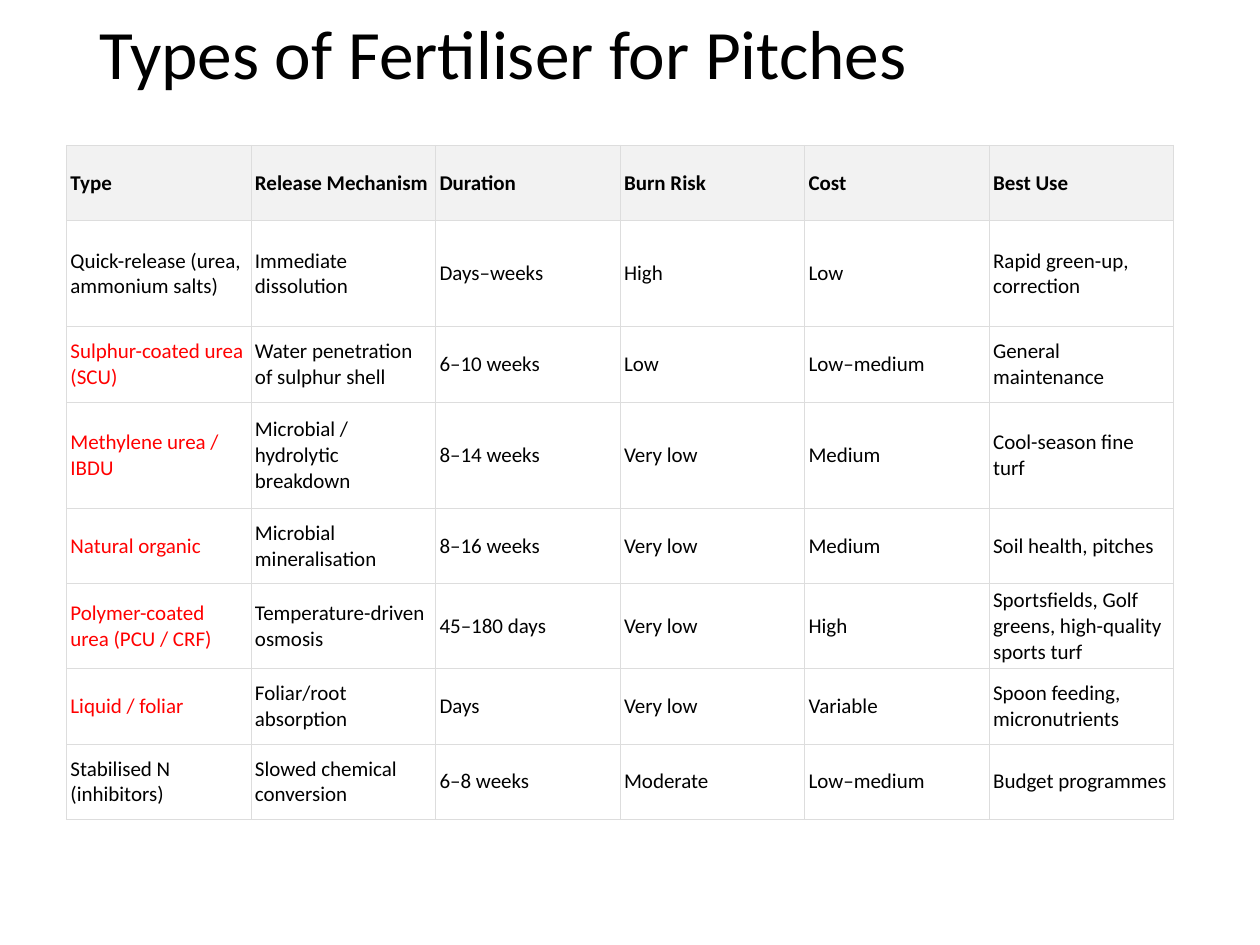
import pptx
import pptx.util
import pptx.dml.color
import pptx.enum.text
import lxml.etree

Cm = pptx.util.Cm
Pt = pptx.util.Pt
RGB = pptx.dml.color.RGBColor
BLACK = RGB(0x00, 0x00, 0x00)
RED = RGB(0xFF, 0x00, 0x00)
GREY = RGB(0xF2, 0xF2, 0xF2)
RULE = RGB(0xDD, 0xDD, 0xDD)
SPACE = "http://schemas.openxmlformats.org/drawingml/2006/main"

ROWS = [
    ["Type", "Release Mechanism", "Duration", "Burn Risk", "Cost", "Best Use"],
    ["Quick-release (urea, ammonium salts)", "Immediate dissolution",
     "Days–weeks", "High", "Low", "Rapid green-up, correction"],
    ["Sulphur-coated urea (SCU)", "Water penetration of sulphur shell",
     "6–10 weeks", "Low", "Low–medium", "General maintenance"],
    ["Methylene urea / IBDU", "Microbial / hydrolytic breakdown",
     "8–14 weeks", "Very low", "Medium", "Cool-season fine turf"],
    ["Natural organic", "Microbial mineralisation",
     "8–16 weeks", "Very low", "Medium", "Soil health, pitches"],
    ["Polymer-coated urea (PCU / CRF)", "Temperature-driven osmosis",
     "45–180 days", "Very low", "High",
     "Sportsfields, Golf greens, high-quality sports turf"],
    ["Liquid / foliar", "Foliar/root absorption",
     "Days", "Very low", "Variable", "Spoon feeding, micronutrients"],
    ["Stabilised N (inhibitors)", "Slowed chemical conversion",
     "6–8 weeks", "Moderate", "Low–medium", "Budget programmes"],
]
TALL = {1, 3}
MARKED = range(2, 7)


class Deck:
    face = "Calibri"
    inset = Cm(0.08)
    line = Pt(0.6)

    def __init__(self, slide):
        self.slide = slide

    def style(self, para, size, color=BLACK, bold=False):
        para.alignment = pptx.enum.text.PP_ALIGN.LEFT
        font = para.font
        font.name = self.face
        font.size = Pt(size)
        font.bold = bold
        font.color.rgb = color

    def title(self, text, left, top, width, height):
        shape = self.slide.shapes.title
        shape.left, shape.top = Cm(left), Cm(top)
        shape.width, shape.height = Cm(width), Cm(height)
        frame = shape.text_frame
        frame.text = text
        frame.word_wrap = True
        frame.auto_size = pptx.enum.text.MSO_AUTO_SIZE.NONE
        frame.vertical_anchor = pptx.enum.text.MSO_ANCHOR.MIDDLE
        para = frame.paragraphs[0]
        para.line_spacing = 0.9
        self.style(para, 39.6)

    def border(self, cell):
        props = cell._tc.get_or_add_tcPr()
        for side in "LRTB":
            edge = lxml.etree.SubElement(
                props, f"{{{SPACE}}}ln{side}", w=str(int(self.line)))
            fill = lxml.etree.SubElement(edge, f"{{{SPACE}}}solidFill")
            lxml.etree.SubElement(fill, f"{{{SPACE}}}srgbClr", val=str(RULE))

    def cell(self, cell, text, head, color):
        cell.text = text
        cell.vertical_anchor = pptx.enum.text.MSO_ANCHOR.MIDDLE
        cell.margin_left = cell.margin_right = self.inset
        cell.margin_top = cell.margin_bottom = self.inset
        self.border(cell)
        if head:
            cell.fill.solid()
            cell.fill.fore_color.rgb = GREY
        else:
            cell.fill.background()
        self.style(cell.text_frame.paragraphs[0], 12, color, head)

    def table(self, rows, left, top, wide, low, high):
        tall = [high if r in TALL else low for r in range(len(rows))]
        count = len(rows[0])
        table = self.slide.shapes.add_table(
            len(rows), count, Cm(left), Cm(top),
            Cm(wide * count), Cm(sum(tall))).table
        table.first_row = table.horz_banding = False
        for col in table.columns:
            col.width = Cm(wide)
        for r, row in enumerate(rows):
            table.rows[r].height = Cm(tall[r])
            for c, text in enumerate(row):
                color = RED if c == 0 and r in MARKED else BLACK
                self.cell(table.cell(r, c), text, r == 0, color)


def main():
    show = pptx.Presentation()
    show.slide_width, show.slide_height = Cm(25.4), Cm(19.05)
    deck = Deck(show.slides.add_slide(show.slide_layouts[5]))
    deck.title("Types of Fertiliser for Pitches\v", 1.75, 1.04, 21.9, 1.88)
    deck.table(ROWS, 1.34, 2.93, 3.72, 1.52, 2.14)
    show.save("out.pptx")


if __name__ == "__main__":
    main()
